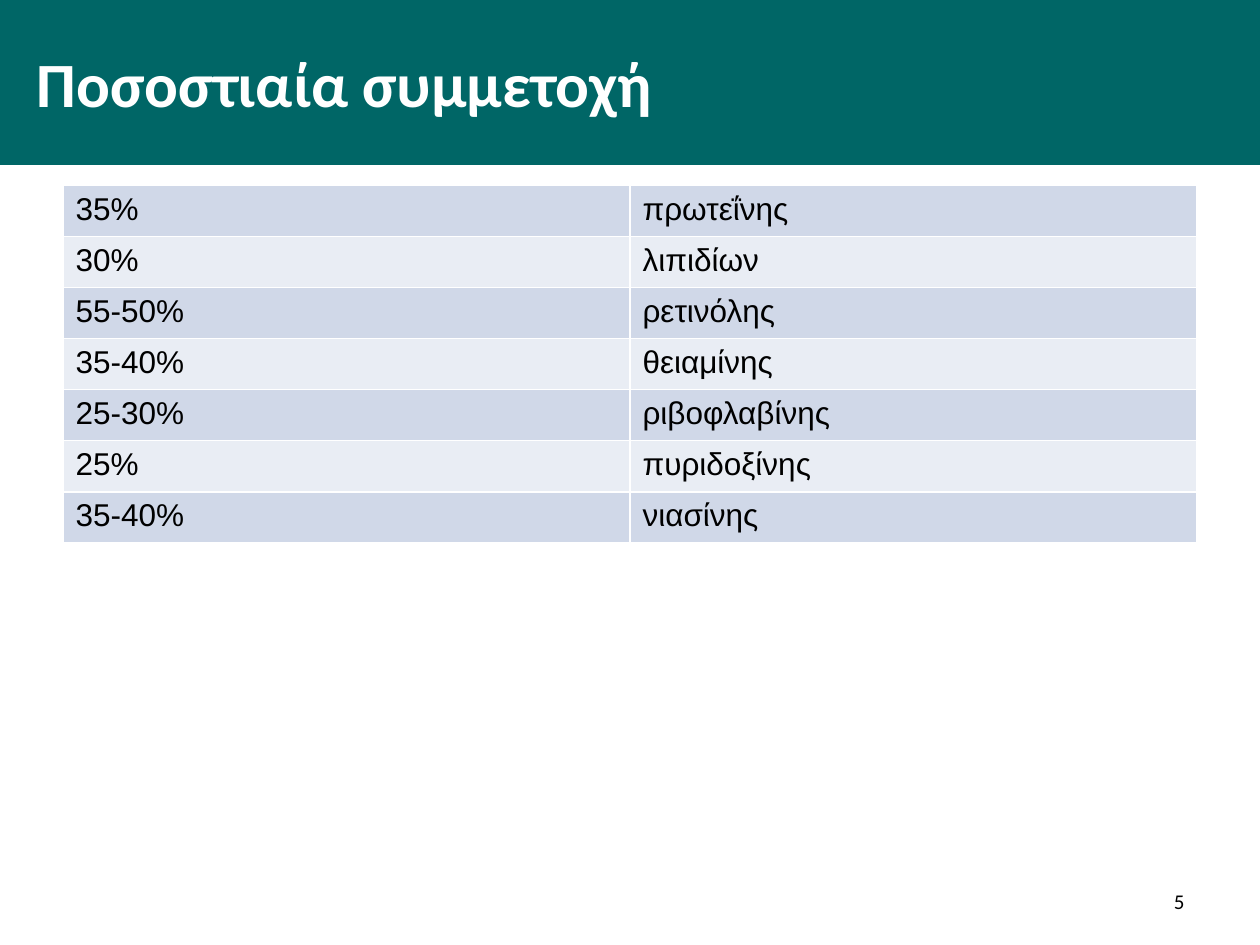
"""Build the slide on percentage contribution to nutrient intake."""
import pptx
import pptx.dml.color
import pptx.enum.text
import pptx.util

Inches = pptx.util.Inches
ALIGN = pptx.enum.text.PP_ALIGN
ANCHOR = pptx.enum.text.MSO_ANCHOR

TITLE = "Ποσοστιαία συμμετοχή"
SLIDE_NUMBER = "5"
CONTRIBUTIONS = [
    ("35%", "πρωτεΐνης"),
    ("30%", "λιπιδίων"),
    ("55-50%", "ρετινόλης"),
    ("35-40%", "θειαμίνης"),
    ("25-30%", "ριβοφλαβίνης"),
    ("25%", "πυριδοξίνης"),
    ("35-40%", "νιασίνης"),
]
BAND_COLORS = ("D0D8E8", "E9EDF4")
TABLE_BOX = (0.5, 1.47, 9, 2.84)


def set_fill(target, color):
    target.fill.solid()
    target.fill.fore_color.rgb = pptx.dml.color.RGBColor.from_string(color)


def write_text(frame, text, size, font="Calibri", color="000000", bold=False, align=ALIGN.LEFT):
    frame.word_wrap = True
    paragraph = frame.paragraphs[0]
    paragraph.alignment = align
    run = paragraph.add_run()
    run.text = text
    run.font.name = font
    run.font.size = pptx.util.Pt(size)
    run.font.bold = bold
    set_fill(run.font, color)


def add_title(slide):
    title = slide.shapes.title
    title.left, title.top, title.width, title.height = map(Inches, (0, 0, 10, 1.31))
    set_fill(title, "006666")
    frame = title.text_frame
    frame.auto_size = pptx.enum.text.MSO_AUTO_SIZE.NONE
    frame.vertical_anchor = ANCHOR.MIDDLE
    frame.margin_left = Inches(0.29)
    write_text(frame, TITLE, 36, color="FFFFFF", bold=True)


def add_contributions(slide):
    row_count, column_count = len(CONTRIBUTIONS), len(CONTRIBUTIONS[0])
    table = slide.shapes.add_table(row_count, column_count, *map(Inches, TABLE_BOX)).table
    table.first_row = False
    for row_index, values in enumerate(CONTRIBUTIONS):
        for column_index, value in enumerate(values):
            cell = table.cell(row_index, column_index)
            set_fill(cell, BAND_COLORS[row_index % 2])
            write_text(cell.text_frame, value, 18, font="Arial")


def add_slide_number(slide):
    frame = slide.shapes.add_textbox(*map(Inches, (7.17, 6.95, 2.33, 0.4))).text_frame
    frame.vertical_anchor = ANCHOR.MIDDLE
    write_text(frame, SLIDE_NUMBER, 12, align=ALIGN.RIGHT)


def main():
    presentation = pptx.Presentation()
    presentation.slide_width, presentation.slide_height = Inches(10), Inches(7.5)
    slide = presentation.slides.add_slide(presentation.slide_layouts[5])
    add_title(slide)
    add_contributions(slide)
    add_slide_number(slide)
    presentation.save("out.pptx")


if __name__ == "__main__":
    main()
